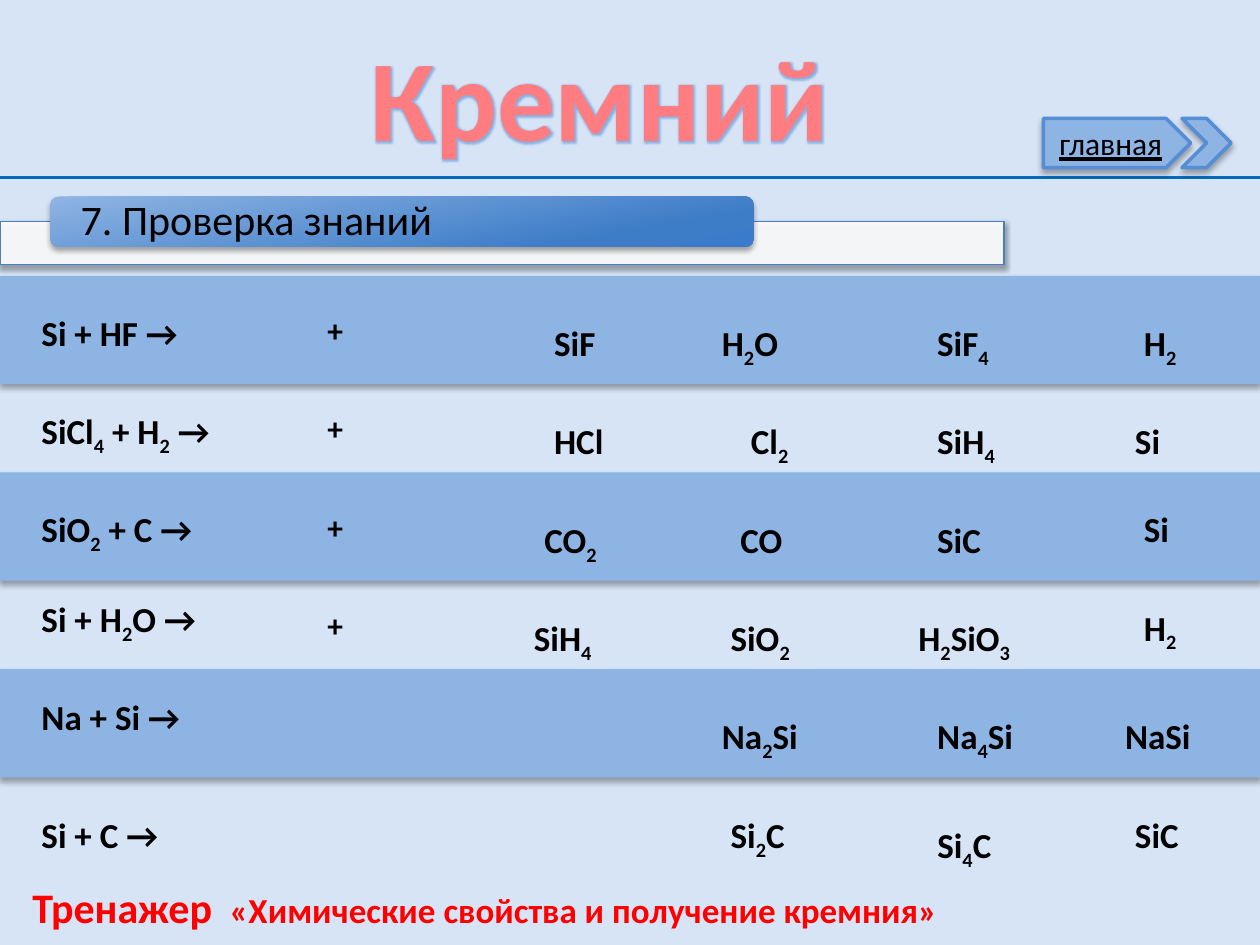
from itertools import groupby

from pptx import Presentation
from pptx.dml.color import RGBColor
from pptx.enum.shapes import MSO_CONNECTOR, MSO_SHAPE as Preset
from pptx.enum.text import MSO_ANCHOR as Anchor, MSO_AUTO_SIZE as AutoSize, PP_ALIGN as Align
from pptx.oxml import parse_xml
from pptx.oxml.ns import nsdecls, qn
from pptx.util import Pt


class Theme:
    font = "Calibri"
    page, band, ink, white = "D7E4F5", "8EB4E3", "000000", "FFFFFF"
    title, accent, rule = "FF7C80", "FF0000", "006BBC"
    card_line, button_line, trainer_line = "4B7EBC", "558ED5", "054697"
    heading_stops = [(0, "8EB4E3"), (80, "3D7CC7"), (100, "3A7CCB")]
    title_size, heading_size, formula_size, small_size = 66, 24, 20, 18


PAGE_WIDTH, PAGE_HEIGHT = 720, 540
FIRST_ROW, ROW_STEP, BAND_HEIGHT = 174.2, 56.2, 61.9
BAND_RISE = 16.6
REACTANT_LEFT, PLUS_LEFT = 16.6, 180

TITLE = "Кремний"
HEADING = "7. Проверка знаний"
BUTTON = "главная"
TRAINER = [("Тренажер ", Theme.heading_size),
           (" «Химические свойства и получение кремния»", Theme.formula_size)]

# Each row: (reactants, drop), has a plus sign, [(product, left, width, drop)]
# where drop is the distance below the top of the row.
ROWS = [
    (("Si + HF →", 0), True,
     [("SiF", 309.6, 45, 6), ("H2O", 405.4, 68, 6), ("SiF4", 528.5, 56, 6), ("H2", 646.6, 40, 6)]),
    (("SiCl4 + H2 →", 0), True,
     [("HCl", 309.6, 50, 6), ("Cl2", 422, 45, 6), ("SiH4", 528.5, 50, 6), ("Si", 641.5, 50, 6)]),
    (("SiO2 + C →", 0), True,
     [("CO2", 304, 50, 6), ("CO", 416, 50, 6), ("SiC", 528.5, 56, 6), ("Si", 646.6, 45, 0)]),
    (("Si + H2O →", -5), True,
     [("SiH4", 298, 62, 6), ("SiO2", 410.4, 62, 6), ("H2SiO3", 517.7, 78, 6), ("H2", 646.6, 50, 0)]),
    (("Na + Si →", -5), False,
     [("Na2Si", 405.4, 78, 6), ("Na4Si", 528.5, 78, 6), ("NaSi", 635.8, 73, 6)]),
    (("Si + C →", 6), False,
     [("Si2C", 410.4, 78, 6), ("Si4C", 528.5, 68, 12), ("SiC", 641.5, 56, 6)]),
]


def rgb(value):
    return RGBColor.from_string(value)


def style(span, size, colour=Theme.ink, bold=True):
    span.font.name = Theme.font
    span.font.size = Pt(size)
    span.font.bold = bold
    span.font.color.rgb = rgb(colour)


def outline_text(span, colour):
    span._r.get_or_add_rPr().insert(0, parse_xml(
        f'<a:ln {nsdecls("a")} w="12700"><a:solidFill><a:srgbClr val="{colour}"/>'
        '</a:solidFill></a:ln>'))


def glow_text(span, colour):
    span._r.get_or_add_rPr().find(qn("a:solidFill")).addnext(parse_xml(
        f'<a:effectLst {nsdecls("a")}><a:glow rad="38100"><a:srgbClr val="{colour}">'
        '<a:alpha val="60000"/></a:srgbClr></a:glow></a:effectLst>'))


def add_box(page, left, top, width, height):
    box = page.shapes.add_textbox(Pt(left), Pt(top), Pt(width), Pt(height))
    box.text_frame.word_wrap = True
    box.text_frame.auto_size = AutoSize.SHAPE_TO_FIT_TEXT
    return box


def add_formula(page, formula, left, top, width, size=Theme.formula_size):
    """Write a bold formula in which every digit is a subscript."""
    box = add_box(page, left, top, width, 31.5 if size == Theme.formula_size else 29)
    para = box.text_frame.paragraphs[0]
    for is_index, letters in groupby(formula, str.isdigit):
        span = para.add_run()
        span.text = "".join(letters)
        style(span, size)
        if is_index:
            span._r.get_or_add_rPr().set("baseline", "-25000")


def add_panel(page, preset, left, top, width, height, fill=None, line=None,
              shadow=(32, 3.5, 2.2)):
    """Add a shape with a soft shadow: opacity in percent, blur, distance."""
    panel = page.shapes.add_shape(preset, Pt(left), Pt(top), Pt(width), Pt(height))
    if fill:
        panel.fill.solid()
        panel.fill.fore_color.rgb = rgb(fill)
    if line:
        colour, weight = line
        panel.line.color.rgb = rgb(colour)
        panel.line.width = Pt(weight)
    else:
        panel.line.fill.background()
    panel.shadow.inherit = False
    opacity, blur, distance = shadow
    panel._element.spPr.find(qn("a:effectLst")).append(parse_xml(
        f'<a:outerShdw {nsdecls("a")} blurRad="{int(Pt(blur))}" dist="{int(Pt(distance))}" '
        'dir="5400000" rotWithShape="0"><a:srgbClr val="000000">'
        f'<a:alpha val="{opacity * 1000}"/></a:srgbClr></a:outerShdw>'))
    return panel


def fill_gradient(panel, stops, angle):
    marks = "".join(f'<a:gs pos="{place * 1000}"><a:srgbClr val="{colour}"/></a:gs>'
                    for place, colour in stops)
    panel._element.spPr.find(qn("a:prstGeom")).addnext(parse_xml(
        f'<a:gradFill {nsdecls("a")} rotWithShape="1"><a:gsLst>{marks}</a:gsLst>'
        f'<a:lin ang="{angle * 60000}" scaled="0"/></a:gradFill>'))


def add_title(page):
    title = page.shapes.title
    title.left, title.top, title.width, title.height = Pt(78.5), Pt(11.5), Pt(528.5), Pt(87)
    frame = title.text_frame
    frame.text = TITLE
    frame.vertical_anchor = Anchor.TOP
    frame.auto_size = AutoSize.SHAPE_TO_FIT_TEXT
    para = frame.paragraphs[0]
    para.alignment = Align.CENTER
    span = para.runs[0]
    style(span, Theme.title_size, Theme.title)
    outline_text(span, Theme.rule)
    glow_text(span, Theme.button_line)


def add_reactions(page):
    for index in range(0, len(ROWS), 2):
        add_panel(page, Preset.RECTANGLE, 0, FIRST_ROW - BAND_RISE + index * ROW_STEP,
                  PAGE_WIDTH, BAND_HEIGHT, Theme.band)
    for index, ((reactants, drop), has_plus, products) in enumerate(ROWS):
        top = FIRST_ROW + index * ROW_STEP
        add_formula(page, reactants, REACTANT_LEFT, top + drop, 146)
        if has_plus:
            add_formula(page, "+", PLUS_LEFT, top, 22.3, Theme.small_size)
        for product, left, width, product_drop in products:
            add_formula(page, product, left, top + product_drop, width)


def add_heading(page):
    rule = page.shapes.add_connector(MSO_CONNECTOR.STRAIGHT, 0, Pt(101.5),
                                     Pt(PAGE_WIDTH), Pt(101.5))
    rule.line.color.rgb = rgb(Theme.rule)
    rule.line.width = Pt(1.5)
    rule._element.spPr.append(parse_xml(f'<a:effectLst {nsdecls("a")}/>'))

    shadow = (35, 3.1, 1.8)
    card = add_panel(page, Preset.RECTANGLE, 0, 126.7, 573.8, 24.5, Theme.white,
                     (Theme.card_line, 0.75), shadow)
    card._element.spPr.find(qn("a:solidFill"))[0].append(
        parse_xml(f'<a:alpha {nsdecls("a")} val="90000"/>'))
    tab = add_panel(page, Preset.ROUNDED_RECTANGLE, 28.8, 112.3, 401.8, 28.8, shadow=shadow)
    fill_gradient(tab, Theme.heading_stops, 80)

    frame = add_box(page, 31, 113.8, 397.4, 26).text_frame
    frame.auto_size = AutoSize.NONE
    frame.vertical_anchor = Anchor.MIDDLE
    frame.margin_left = frame.margin_right = Pt(15.1)
    frame.margin_top = frame.margin_bottom = 0
    frame.text = HEADING
    frame.paragraphs[0].line_spacing = 0.9
    style(frame.paragraphs[0].runs[0], Theme.heading_size, bold=False)


def add_trainer(page):
    para = add_box(page, 11.5, 500.4, 652.3, 36).text_frame.paragraphs[0]
    for text, size in TRAINER:
        span = para.add_run()
        span.text = text
        style(span, size, Theme.accent)
        outline_text(span, Theme.trainer_line)


def add_button(page):
    line = (Theme.button_line, 2)
    label = add_panel(page, Preset.PENTAGON, 596.2, 67.7, 84.2, 28.1, Theme.band, line)
    add_panel(page, Preset.CHEVRON, 675.4, 67.7, 28.1, 28.1, Theme.band, line)
    frame = label.text_frame
    frame.text = BUTTON
    frame.vertical_anchor = Anchor.MIDDLE
    para = frame.paragraphs[0]
    para.alignment = Align.CENTER
    style(para.runs[0], Theme.small_size, bold=False)
    para.runs[0].font.underline = True


def main():
    deck = Presentation()
    deck.slide_width, deck.slide_height = Pt(PAGE_WIDTH), Pt(PAGE_HEIGHT)
    page = deck.slides.add_slide(deck.slide_layouts[5])
    page.background.fill.solid()
    page.background.fill.fore_color.rgb = rgb(Theme.page)
    for add_part in (add_title, add_reactions, add_heading, add_trainer, add_button):
        add_part(page)
    deck.save("out.pptx")


if __name__ == "__main__":
    main()
